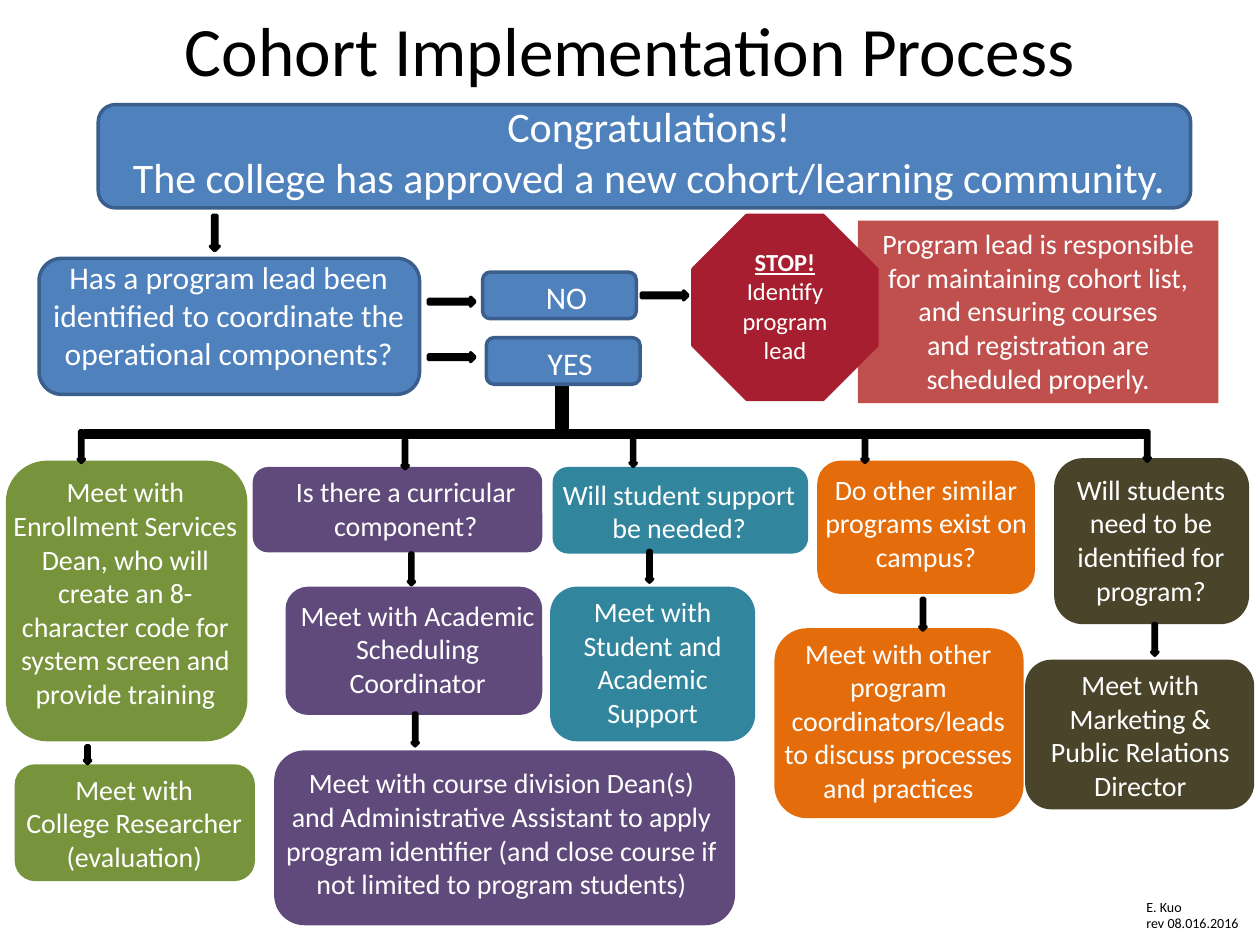
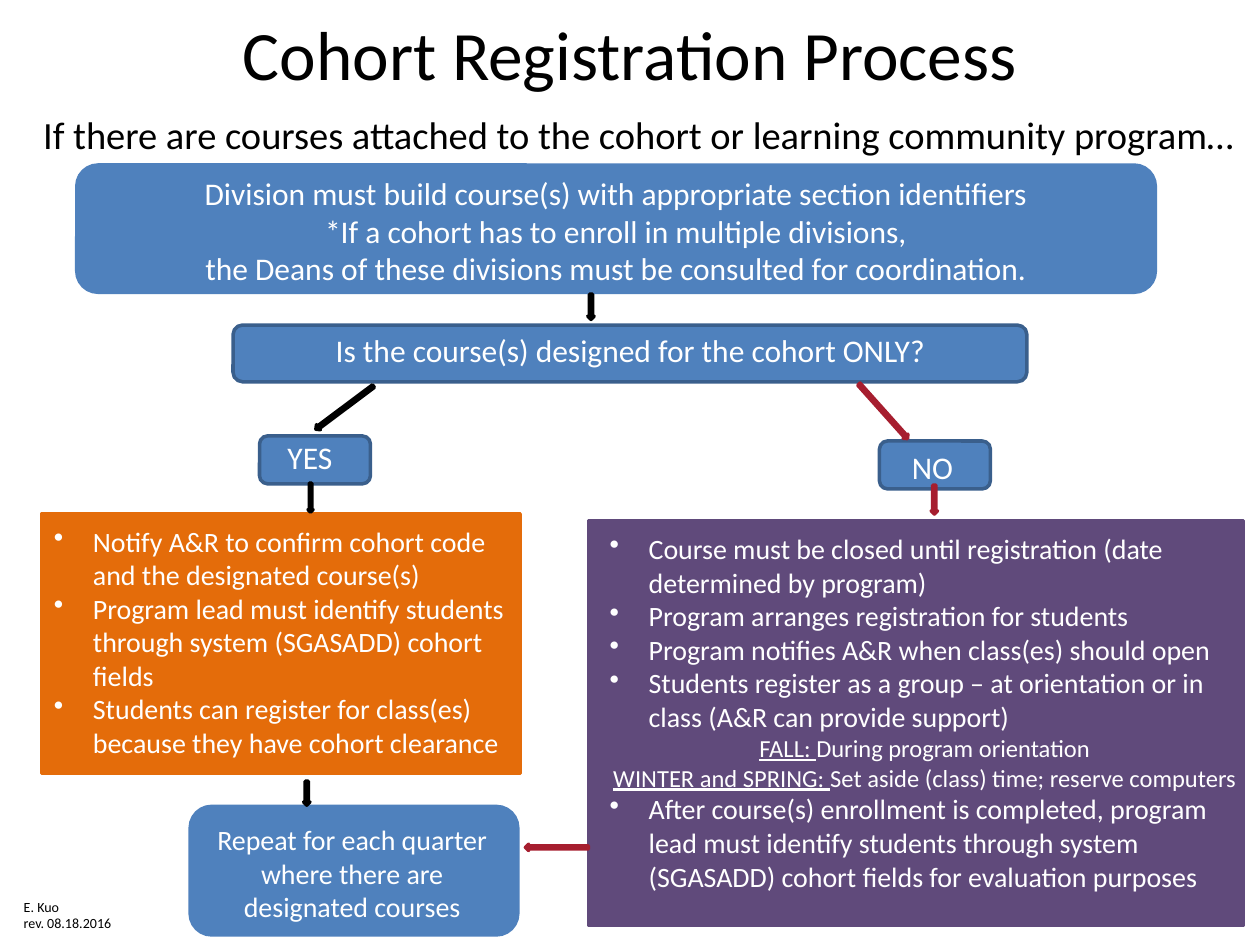
import pptx
import pptx.util
import pptx.dml.color
import pptx.enum.shapes
import pptx.enum.text
import pptx.oxml
import pptx.oxml.ns

WIDTH, HEIGHT = pptx.util.Inches(10), pptx.util.Inches(7.5)
COLUMNS, ROWS = 100, 75
KINDS = pptx.enum.shapes.MSO_SHAPE
ALIGN = pptx.enum.text.PP_ALIGN
ANCHOR = pptx.enum.text.MSO_ANCHOR
FIT = pptx.enum.text.MSO_AUTO_SIZE
BLACK, WHITE = "000000", "FFFFFF"
BLUE, NAVY, RED, BRICK = "4F81BD", "3A5F8C", "A61E2F", "C0504D"
GREEN, PURPLE, TEAL, ORANGE, OLIVE = "77933C", "604A7B", "31859C", "E46C0A", "4A452A"
TITLE_SIZE, LARGE, MEDIUM, BODY, SMALL, CREDIT = 39.6, 24, 18, 16, 14, 8


def colour(value):
    """Turn a hex string into an RGB colour."""
    return pptx.dml.color.RGBColor.from_string(value)


def apply(target, values):
    """Set each named attribute of the target."""
    for name, value in values.items():
        setattr(target, name, value)


def frame(box):
    """Convert a box in columns and rows to slide lengths."""
    left, top, width, height = box
    return (round(left * WIDTH / COLUMNS), round(top * HEIGHT / ROWS),
            round(width * WIDTH / COLUMNS), round(height * HEIGHT / ROWS))


def inside(region, part):
    """Move a part from its region's corner to the slide grid."""
    return region[0] + part[0], region[1] + part[1], part[2], part[3]


def adjust(box, change):
    """Add a change to each side of a box."""
    return tuple(side + step for side, step in zip(box, change))


def add_bullet(paragraph):
    """Give a paragraph a hanging round bullet."""
    properties = paragraph._p.get_or_add_pPr()
    indent = pptx.util.Inches(0.31)
    properties.set("marL", str(indent))
    properties.set("indent", str(-indent))
    bullet = pptx.oxml.parse_xml(
        f'<a:buChar {pptx.oxml.ns.nsdecls("a")} char="•"/>')
    properties.append(bullet)


def write(shape, paragraphs, size, ink=WHITE, align=ALIGN.CENTER,
          fit=FIT.SHAPE_TO_FIT_TEXT, anchor=ANCHOR.TOP):
    """Fill a shape with paragraphs of text or of formatted runs."""
    text_frame = shape.text_frame
    apply(text_frame, {"word_wrap": True, "auto_size": fit, "vertical_anchor": anchor})
    for index, content in enumerate(paragraphs):
        paragraph = text_frame.add_paragraph() if index else text_frame.paragraphs[0]
        if isinstance(content, str) and content.startswith("• "):
            add_bullet(paragraph)
            content = content[2:]
            paragraph.alignment = ALIGN.LEFT
        else:
            paragraph.alignment = align
        runs = [(content, {})] if isinstance(content, str) else content
        for text, values in runs:
            run = paragraph.add_run()
            run.text = text
            apply(run.font, {"name": "Calibri", "size": pptx.util.Pt(size), **values})
            run.font.color.rgb = colour(ink)


def add_block(shapes, kind, box, fill, line=None):
    """Draw one filled preset shape."""
    shape = shapes.add_shape(kind, *frame(box))
    shape.shadow.inherit = False
    shape.fill.solid()
    shape.fill.fore_color.rgb = colour(fill)
    shape.line.color.rgb = colour(line or fill)
    shape.line.width = pptx.util.Pt(2)
    return shape


def add_label(shapes, box, paragraphs, size, **options):
    """Write text in a box of its own."""
    write(shapes.add_textbox(*frame(box)), paragraphs, size, **options)


def add_node(slide, box, change, paragraphs, fill, line=None, size=BODY,
             kind=KINDS.ROUNDED_RECTANGLE):
    """Group a block with its label, sized by a change to the block's box."""
    shapes = slide.shapes.add_group_shape().shapes
    add_block(shapes, kind, box, fill, line)
    add_label(shapes, adjust(box, change), paragraphs, size)


def add_arrow(slide, box, kind=KINDS.RIGHT_ARROW, rotation=0, fill=BLACK):
    """Draw a slim block arrow."""
    add_block(slide.shapes, kind, box, fill).rotation = rotation


def add_slide(presentation, title, box, credit, credit_box):
    """Start a slide with its title and the author's credit."""
    slide = presentation.slides.add_slide(presentation.slide_layouts[5])
    placeholder = slide.shapes.title
    apply(placeholder, dict(zip(("left", "top", "width", "height"), frame(box))))
    write(placeholder, [title], TITLE_SIZE, ink=BLACK, fit=FIT.NONE, anchor=ANCHOR.MIDDLE)
    add_label(slide.shapes, credit_box, ["E. Kuo", credit], CREDIT,
              ink=BLACK, align=ALIGN.LEFT)
    return slide


def add_announcement(slide, box):
    """Place the approval banner."""
    add_node(slide, box, (0.7, -0.8, -0.7, 0.9),
             ["Congratulations!", "The college has approved a new cohort/learning community."],
             BLUE, NAVY, LARGE)


def add_lead_check(slide, region):
    """Place the program lead question, its answers and the stop sign."""
    duty = add_block(slide.shapes, KINDS.RECTANGLE, inside(region, (65, 0.4, 28.6, 14.5)), BRICK)
    duty.line.fill.background()
    write(duty, ["Program lead is responsible for maintaining cohort list, and ensuring courses",
                 "and registration are", "scheduled properly."], BODY)
    add_node(slide, inside(region, (0, 3.4, 30.2, 10.8)), (-0.9, -0.5, 1.7, 3),
             ["Has a program lead been identified to coordinate the operational components?"],
             BLUE, NAVY, MEDIUM)
    add_block(slide.shapes, KINDS.RECTANGLE, inside(region, (41.1, 12.9, 0.8, 4.2)), BLACK)
    for answer, left, top in (("NO", 35.2, 4.5), ("YES", 35.5, 9.7)):
        add_node(slide, inside(region, (left, top, 12.2, 3.7)), (1.1, 0, -1.1, 0.3),
                 [answer], BLUE, NAVY, MEDIUM)
    add_arrow(slide, inside(region, (13.6, 0, 0.7, 2.8)), KINDS.DOWN_ARROW)
    for left, top in ((30.9, 6.5), (30.9, 10.9), (47.8, 6)):
        add_arrow(slide, inside(region, (left, top, 3.7, 0.7)))
    add_node(slide, inside(region, (51.9, 0, 14.6, 14.6)), (1.2, 2, -2.4, -4.2),
             [[("STOP!", {"bold": True, "underline": True})], "Identify program lead"],
             RED, size=SMALL, kind=KINDS.OCTAGON)


def add_branch(slide, region, fill, steps, arrows):
    """Place one column of steps and the arrows that lead to them."""
    for box, change, paragraphs in steps:
        add_node(slide, inside(region, box), change, paragraphs, fill)
    for left, top, height in arrows:
        add_arrow(slide, inside(region, (left, top, 0.5, height)), KINDS.DOWN_ARROW)


BRANCHES = [
    (0.6, GREEN, [
        ((0, 2.5, 18.9, 22), (-0.7, 0.5, 1.2, -0.6),
         ["Meet with Enrollment Services Dean, who will create an 8-character code "
          "for system screen and provide training"]),
        ((0.7, 26.6, 18.8, 9), (-0.6, 0, 1.1, 3),
         ["Meet with", "College Researcher (evaluation)"])],
     [(5.6, 0, 2.5), (6.1, 25, 1.4)]),
    (20.2, PURPLE, [
        ((0, 3, 22.7, 6.5), (0, 0, 1.3, -0.1), ["Is there a curricular component?"]),
        ((2.6, 12.5, 20.1, 9.9), (-0.3, 0.3, 1.2, 1.6),
         ["Meet with Academic Scheduling Coordinator"]),
        ((1.7, 25.5, 36.3, 13.6), (-0.2, 0.6, -0.1, -1.8),
         ["Meet with course division Dean(s) and Administrative Assistant to apply "
          "program identifier (and close course if not limited to program students)"])],
     [(11.7, 0.7, 2.3), (12.2, 9.7, 2.5), (12.5, 22.4, 2.6)]),
    (44, TEAL, [
        ((0, 3, 20, 6.6), (-0.7, 0.2, 1.2, -0.3), ["Will student support be needed?"]),
        ((-0.2, 12.5, 16, 12), (-0.5, 0, 1, -1.3),
         ["Meet with Student and Academic Support"])],
     [(6, 0.5, 2.3), (7.3, 9.5, 2.5)]),
    (65, ORANGE, [
        ((0, 2.5, 17, 10.3), (-0.5, 0.3, 1, -2.3),
         ["Do other similar programs exist on campus?"]),
        ((-3.4, 15.8, 19.5, 14.8), (-0.6, 0, 1.1, -0.3),
         ["Meet with other program coordinators/leads to discuss processes and practices"])],
     [(3.4, 0.2, 2.3), (8, 13.3, 2.5)]),
    (83.8, OLIVE, [
        ((0, 2.3, 15.2, 12.9), (-0.5, 0.5, 0.9, -1.7),
         ["Will students need to be identified for program?"]),
        ((-2.3, 18.3, 17.9, 11.6), (-0.5, 0, 1.1, 0.5),
         ["Meet with Marketing & Public Relations Director"])],
     [(7, 0, 2.4), (7.6, 15.3, 2.5)]),
]


def add_branches(slide, region):
    """Place the distribution bar with every branch under it."""
    add_block(slide.shapes, KINDS.RECTANGLE, inside(region, (6.7, 0, 84.4, 0.5)), BLACK)
    for left, fill, steps, arrows in BRANCHES:
        add_branch(slide, inside(region, (left, 0, 0, 0)), fill, steps, arrows)


def add_course_question(slide, region):
    """Place the course rule, the question and its two answers."""
    add_label(slide.shapes, inside(region, (0, 0, 97.6, 4.7)),
              ["If there are courses attached to the cohort or learning community program…"],
              22, ink=BLACK)
    add_node(slide, inside(region, (4.2, 4.8, 85.6, 10.1)), (-2.5, 0.2, 5, 0),
             ["Division must build course(s) with appropriate section identifiers",
              "*If a cohort has to enroll in multiple divisions,",
              "the Deans of these divisions must be consulted for coordination."],
             BLUE, size=MEDIUM)
    add_node(slide, inside(region, (16.6, 17.5, 63, 4.5)), (-1.8, 0, 3.7, -0.5),
             ["Is the course(s) designed for the cohort ONLY?"], BLUE, NAVY, MEDIUM)
    for answer, left, top, change in (("YES", 18.7, 26.3, (0, -0.3, -0.8, 0.2)),
                                      ("NO", 67.9, 26.7, (0.2, 0.1, -0.8, 0.2))):
        add_node(slide, inside(region, (left, top, 8.8, 3.8)), change,
                 [answer], BLUE, NAVY, MEDIUM)
    for box, rotation, fill in (((44, 15.8, 2, 0.5), 90, BLACK),
                                ((22.6, 23.8, 5.7, 0.5), 143.2, BLACK),
                                ((65.3, 24.1, 5.8, 0.5), 48.2, RED)):
        add_arrow(slide, inside(region, box), rotation=rotation, fill=fill)


def add_exclusive_steps(slide, region):
    """Place the steps for a cohort-only course and the closing note."""
    add_node(slide, inside(region, (0, 0, 38, 20.6)), (0, 0.3, -0.3, -0.7),
             ["• Notify A&R to confirm cohort code and the designated course(s)",
              "• Program lead must identify students through system (SGASADD) cohort fields",
              "• Students can register for class(es) because they have cohort clearance"],
             ORANGE, kind=KINDS.RECTANGLE)
    add_node(slide, inside(region, (11.8, 23.2, 26, 10.2)), (-0.9, 0.8, 1.5, -1.1),
             ["Repeat for each quarter", "where there are", "designated courses"], BLUE)
    for box in ((20.2, -1.5, 2.3, 0.4), (20.1, 21.9, 1.9, 0.5)):
        add_arrow(slide, inside(region, box), rotation=90)


def add_open_steps(slide, region):
    """Place the steps for a course that others may join."""
    underlined = {"size": pptx.util.Pt(SMALL), "underline": True}
    plain = {"size": pptx.util.Pt(SMALL)}
    add_node(slide, region, (0.7, 0.4, 0, -2.1),
             ["• Course must be closed until registration (date determined by program)",
              "• Program arranges registration for students",
              "• Program notifies A&R when class(es) should open",
              "• Students register as a group – at orientation or in class "
              "(A&R can provide support)",
              [("FALL: ", underlined), ("During program orientation", plain)],
              [("WINTER and SPRING: ", underlined),
               ("Set aside (class) time; reserve computers", plain)],
              "• After course(s) enrollment is completed, program lead must identify "
              "students through system (SGASADD) cohort fields for evaluation purposes"],
             PURPLE, kind=KINDS.RECTANGLE)
    for box, rotation in (((26.3, -1.9, 2.3, 0.5), 90), ((-5, 25.7, 5, 0.5), 180)):
        add_arrow(slide, inside(region, box), rotation=rotation, fill=RED)


def main():
    """Build both process charts and save them."""
    presentation = pptx.Presentation()
    apply(presentation, {"slide_width": WIDTH, "slide_height": HEIGHT})
    slide = add_slide(presentation, "Cohort Implementation Process", (0, 0.8, 100, 6.2),
                      "rev 08.016.2016", (90, 70.8, 14.4, 3.7))
    add_announcement(slide, (7.8, 8.3, 86.7, 8.2))
    add_lead_check(slide, (3.1, 17.1, 93.6, 17.1))
    add_branches(slide, (0, 34.2, 100, 39.1))
    slide = add_slide(presentation, "Cohort Registration Process", (0, 0.8, 100, 6.7),
                      "rev. 08.18.2016", (0.9, 70.8, 10.4, 3.7))
    add_course_question(slide, (1.9, 8.3, 97.6, 30.5))
    add_exclusive_steps(slide, (3.3, 40.8, 38, 33.4))
    add_open_steps(slide, (46.7, 41.3, 52, 32.1))
    presentation.save("out.pptx")


if __name__ == "__main__":
    main()
